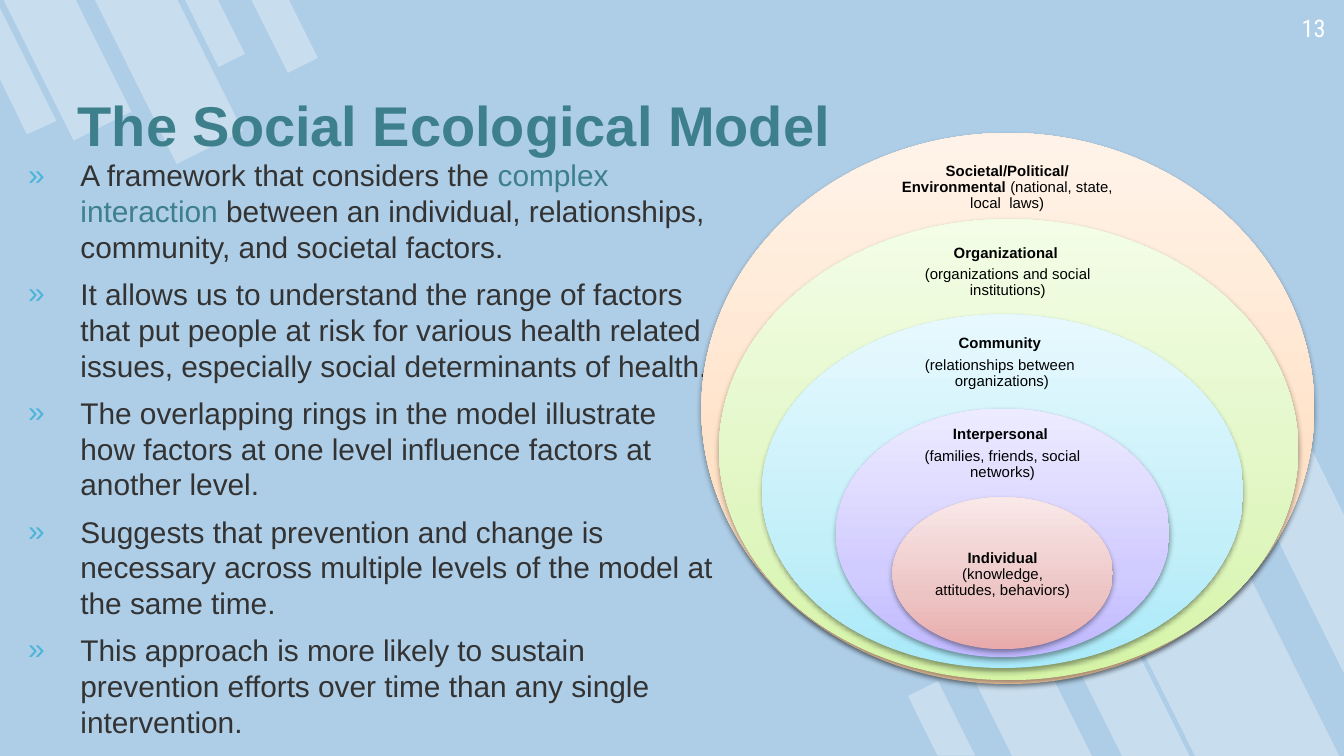
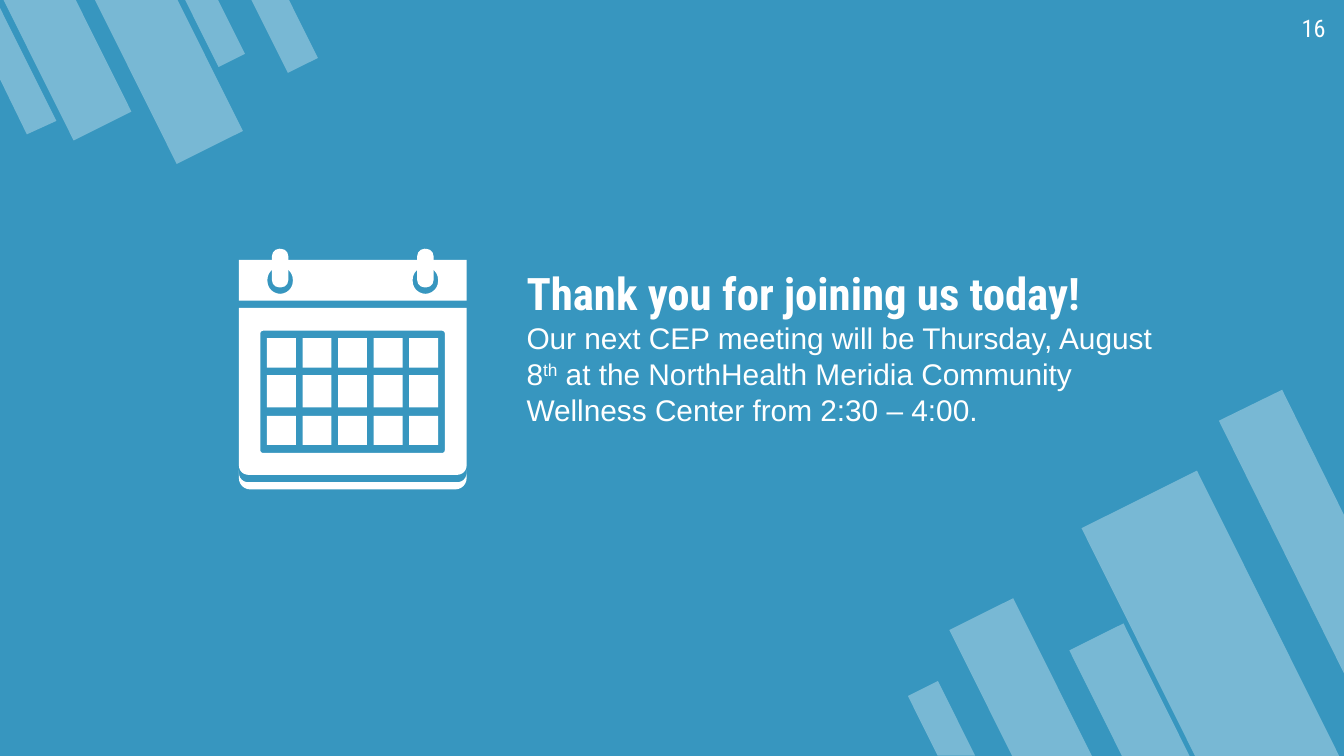
from math import cos, radians, sin

from lxml.etree import SubElement
from pptx import Presentation
from pptx.dml.color import RGBColor
from pptx.enum.shapes import MSO_SHAPE
from pptx.enum.text import MSO_ANCHOR, PP_ALIGN
from pptx.oxml.ns import qn
from pptx.util import Pt

WHITE = RGBColor(0xFF, 0xFF, 0xFF)
BLACK = RGBColor(0, 0, 0)
PALE = RGBColor(0xAE, 0xCD, 0xE6)
BLUE = RGBColor(0x37, 0x96, 0xBF)
TEAL = RGBColor(0x3D, 0x80, 0x8C)
DARK = RGBColor(0x33, 0x33, 0x33)
SKY = RGBColor(0x4B, 0xB5, 0xD9)
SANS, SLIM = "Arial", "Roboto Condensed"

BOLD, PLAIN = {"bold": True}, {"bold": False}

STRIPES = [
    (153.5, [(527.8, 324, 38.2, 95), (614.2, 258.5, 69.1, 172.1),
             (589, 337, 32.4, 79.9), (495.4, 366.5, 18, 44.6)]),
    (333.5, [(107.3, -5.8, 15.8, 40.3), (18.7, -13, 34.6, 85),
             (70.6, -14.4, 39.6, 98.6), (143.3, -7.2, 18, 44.6)]),
]
EDGES = [
    [(686.9, 208.8), (653, 225.4), (720, 360.7), (720, 275.8)],
    [(14.4, 72), (30.2, 64.8), (0, 4.3), (0, 42.5)],
]

TITLE = "The Social Ecological Model"
POINTS = [
    [("A framework that considers the ", {}),
     ("complex interaction ", {"color": TEAL}),
     ("between an individual, relationships, community, and societal factors.", {})],
    [("It allows us to understand the range of factors that put people at risk for "
      "various health related issues, especially social determinants of health.", {})],
    [("The overlapping rings in the model illustrate how factors at one level "
      "influence factors at another level.", {})],
    [("Suggests that prevention and change is necessary across multiple levels of "
      "the model at the same time.", {})],
    [("This approach is more likely to sustain prevention efforts over time than "
      "any single intervention.", {})],
]
RINGS = [
    ((375.8, 71.3, 328.3, 295.2), ("FFD6AD", "FFE1C5", "FFF3E9"),
     (478.1, 85.7, 123.1, 29.5),
     [[("Societal/Political/ Environmental ", BOLD),
       ("(national, state, local  laws)", PLAIN)]]),
    ((385.2, 117.4, 310.3, 247), ("D5F4A6", "E0F6C1", "F3FDE7"),
     (473, 131.8, 133.9, 28.1),
     [[("Organizational ", BOLD)],
      [("(organizations and social institutions)", PLAIN)]]),
    ((408.2, 168.5, 257.8, 189.4), ("A9E9F9", "C3EFF9", "E7F9FE"),
     (470.2, 181.4, 133.2, 25.9),
     [[("Community ", BOLD)],
      [("(relationships between  organizations)", PLAIN)]]),
    ((447.8, 218.9, 178.6, 133.2), ("BFB8FF", "D1CCFF", "EDEBFF"),
     (488.9, 231.1, 96.5, 23.8),
     [[("Interpersonal ", BOLD)],
      [("(families, friends, social networks)", PLAIN)]]),
    ((478.1, 266.4, 118.1, 81.4), ("E8AAAA", "EDC4C4", "F9E8E8"),
     (495.4, 287.3, 83.5, 41),
     [[("Individual", BOLD), (" (knowledge, attitudes, behaviors)", PLAIN)]]),
]
THANKS = [
    [("Thank you for joining us today!", {"size": 24, "font": SLIM, "bold": True})],
    [("Our next CEP meeting will be Thursday, August 8", {}),
     ("th", {"base": 30}),
     (" at the NorthHealth Meridia Community Wellness Center from 2:30 – 4:00.", {})],
]

LEFT, RIGHT = 128, 250
HOOKS = [150.1, 227.9]
ROWS = [(181.2, 15.8), (201, 17.2), (222.8, 15.6)]
COLS = [143 + 19.05 * i for i in range(5)]


def node(parent, tag, **attrs):
    return SubElement(parent, qn(tag), {k: str(v) for k, v in attrs.items()})


def paint(shape, color, alpha=None):
    shape.shadow.inherit = False
    shape.line.fill.background()
    shape.fill.solid()
    shape.fill.fore_color.rgb = color
    if alpha:
        tint = shape._element.spPr.find(qn("a:solidFill"))[0]
        node(tint, "a:alpha", val=alpha * 1000)
    return shape


def preset(slide, kind, box):
    return slide.shapes.add_shape(kind, *[Pt(v) for v in box])


def outline(slide, *paths):
    first, *rest = [[(Pt(x), Pt(y)) for x, y in path] for path in paths]
    build = slide.shapes.build_freeform(*first[0])
    build.add_line_segments(first[1:])
    for path in rest:
        build.move_to(*path[0])
        build.add_line_segments(path[1:])
    return build.convert_to_shape()


def bullet(para, mark):
    props = para._p.get_or_add_pPr()
    props.set("marL", str(Pt(36)))
    props.set("indent", str(Pt(-28)))
    node(node(props, "a:buClr"), "a:srgbClr", val=SKY)
    node(props, "a:buFont", typeface=SANS)
    node(props, "a:buChar", char=mark)


def text(slide, box, paras, size=16, font=SANS, color=WHITE, bold=False, base=0,
         align=PP_ALIGN.LEFT, anchor=MSO_ANCHOR.TOP, pad=(7.2, 7.2),
         before=0, after=0, lead=None, mark=None):
    frame = slide.shapes.add_textbox(*[Pt(v) for v in box]).text_frame
    frame.word_wrap = True
    frame.vertical_anchor = anchor
    frame.margin_left = frame.margin_right = Pt(pad[0])
    frame.margin_top = frame.margin_bottom = Pt(pad[1])
    for i, runs in enumerate(paras):
        para = frame.paragraphs[0] if i == 0 else frame.add_paragraph()
        para.alignment = align
        para.space_before = Pt(before)
        if lead:
            para.line_spacing = lead
        if after:
            gap = node(para._p.get_or_add_pPr(), "a:spcAft")
            node(gap, "a:spcPct", val=after * 1000)
        if mark:
            bullet(para, mark)
        for words, own in runs:
            look = {"size": size, "font": font, "color": color,
                    "bold": bold, "base": base, **own}
            run = para.add_run()
            run.text = words
            run.font.size = Pt(look["size"])
            run.font.name = look["font"]
            run.font.bold = look["bold"]
            run.font.color.rgb = look["color"]
            if look["base"]:
                run._r.get_or_add_rPr().set("baseline", str(look["base"] * 1000))


def start(deck, color, number):
    slide = deck.slides.add_slide(deck.slide_layouts[6])
    slide.background.fill.solid()
    slide.background.fill.fore_color.rgb = color
    for turn, boxes in STRIPES:
        for box in boxes:
            stripe = preset(slide, MSO_SHAPE.FLOWCHART_MANUAL_INPUT, box)
            stripe.rotation = turn
            stripe._element.spPr.find(qn("a:xfrm")).set("flipH", "1")
            paint(stripe, WHITE, 33)
    for edge in EDGES:
        paint(outline(slide, edge), WHITE, 33)
    text(slide, (674, 0, 43.2, 31), [[(number, {})]], size=13, font=SLIM,
         align=PP_ALIGN.RIGHT)
    return slide


def ring(slide, box, colors):
    oval = paint(preset(slide, MSO_SHAPE.OVAL, box), WHITE)
    oval.fill.gradient()
    oval.fill.gradient_angle = 90
    props = oval._element.spPr
    grad = props.find(qn("a:gradFill"))
    grad.find(qn("a:lin")).set("ang", str(270 * 60000))
    stops = grad.find(qn("a:gsLst"))
    for old in list(stops):
        stops.remove(old)
    for place, color in zip((0, 35, 100), colors):
        node(node(stops, "a:gs", pos=place * 1000), "a:srgbClr", val=color)
    shade = node(props.find(qn("a:effectLst")), "a:outerShdw", blurRad=Pt(3.1),
                 dist=Pt(1.6), dir=90 * 60000, rotWithShape=0)
    node(node(shade, "a:srgbClr", val=BLACK), "a:alpha", val=38000)


def arc(x, y, r, first):
    turns = [radians(first - 15 * i) for i in range(7)]
    return [(x + r * cos(t), y + r * sin(t)) for t in turns]


def bowl(left, right, low, r):
    return arc(left + r, low - r, r, 180) + arc(right - r, low - r, r, 90)


def panel(left, top, right, low, high=0, deep=0):
    return (bowl(left, right, low, deep)
            + arc(right - high, top + high, high, 0)
            + arc(left + high, top + high, high, -90))


def month(slide):
    holes = [panel(x - 6.8, 143, x + 6.8, 157.4, 6.8, 6.8) for x in HOOKS]
    head = outline(slide, panel(LEFT, 139.2, RIGHT, 161), *holes)
    body = outline(slide, panel(LEFT, 165, RIGHT, 254.4, 0, 5),
                   panel(139.5, 177.2, 238.3, 242.7, 1.5, 1.5))
    base = outline(slide, [(LEFT, 252)] + bowl(LEFT, RIGHT, 262.2, 6) + [(RIGHT, 252)]
                   + bowl(LEFT, RIGHT, 258.4, 5)[::-1])
    for part in (head, body, base):
        paint(part, WHITE)
    for x in HOOKS:
        hook = preset(slide, MSO_SHAPE.ROUNDED_RECTANGLE, (x - 4.4, 133.3, 8.8, 20.7))
        hook.adjustments[0] = 0.45
        paint(hook, WHITE)
    for top, high in ROWS:
        for x in COLS:
            paint(preset(slide, MSO_SHAPE.RECTANGLE, (x, top, 15.5, high)), WHITE)


def main():
    deck = Presentation()
    deck.slide_width, deck.slide_height = Pt(720), Pt(405)

    model = start(deck, PALE, "13")
    text(model, (0, 77, 390.2, 310.3), POINTS, color=DARK, before=6, mark="»")
    text(model, (34.6, 38.2, 453.6, 53.3), [[(TITLE, {})]], size=30, color=TEAL,
         bold=True, anchor=MSO_ANCHOR.BOTTOM)
    for box, colors, spot, label in RINGS:
        ring(model, box, colors)
        text(model, spot, label, size=8, color=BLACK, align=PP_ALIGN.CENTER,
             anchor=MSO_ANCHOR.MIDDLE, pad=(4.3, 4.3), lead=0.9, after=35)

    close = start(deck, BLUE, "16")
    month(close)
    text(close, (275, 139, 350, 94.3), THANKS, pad=(7.2, 3.6))

    deck.save("out.pptx")


if __name__ == "__main__":
    main()
